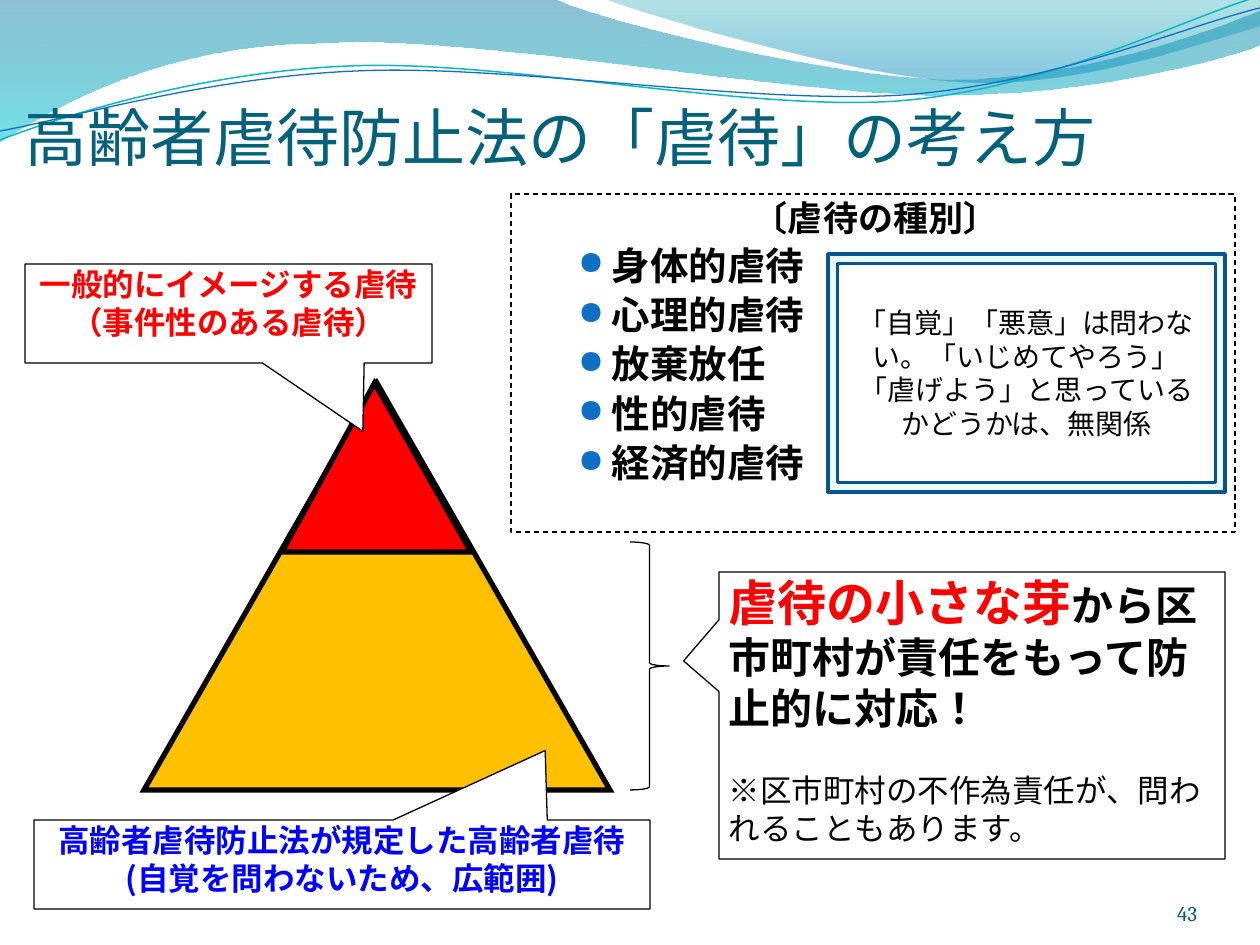
from math import cos, radians, sin

from lxml.etree import SubElement
from pptx import Presentation
from pptx.dml.color import RGBColor
from pptx.enum.dml import MSO_LINE
from pptx.enum.lang import MSO_LANGUAGE_ID
from pptx.enum.shapes import MSO_SHAPE
from pptx.enum.text import MSO_ANCHOR, PP_ALIGN
from pptx.oxml.ns import qn
from pptx.util import Pt

PX = 914400 / 126
JP, LATIN = "Noto Sans CJK JP", "Cambria"
C = {
    "black": "000000", "white": "FFFFFF", "red": "FF0000", "blue": "0000FF",
    "amber": "FFC000", "title": "04617B", "number": "045D75",
    "bullet": "0F6FC6", "frame": "0B5292", "frame_fill": "C9FAFC",
    "teal_line": "0AB8BF", "blue_line": "0F6FC6",
    "deep": "0074A1", "cyan": "00C6CF", "green": "00A1A9", "sky": "008BBF",
}
KINDS = ["身体的虐待", "心理的虐待", "放棄放任", "性的虐待", "経済的虐待"]
TILT = -2.7

# Each wave: two values are a straight step, six are a cubic curve.
BAND = [(0, -1), (554, -1), (600, 21, 837, 79, 955, 79),
        (1075, 79, 1207, 33, 1260, 11), (1261, 45),
        (1239, 55, 1096, 96, 940, 95), (784, 95, 481, 35, 324, 43),
        (163, 44, 58, 105, -1, 142), (0, -1)]
CREST = [(604, -1), (641, 14, 859, 78, 969, 82),
         (1079, 87, 1211, 40, 1260, 26), (1260, 0), (604, -1)]
TEAL_WAVE = [(0, 140), (60, 117, 199, 72, 349, 66),
             (498, 59, 747, 112, 898, 101), (1050, 89, 1182, 19, 1257, -3)]
BLUE_WAVE = [(0, 131), (59, 121, 207, 77, 357, 71),
             (508, 64, 752, 105, 903, 95), (1053, 84, 1185, 26, 1260, 8)]


def px(n):
    return round(n * PX)


def rgb(name):
    return RGBColor.from_string(C[name])


def set_alpha(parent, percents):
    """Give each colour below parent its opacity, in order."""
    for clr, percent in zip(parent.iter(qn("a:srgbClr")), percents):
        SubElement(clr, qn("a:alpha")).set("val", str(percent * 1000))


def set_line(shape, color, width):
    shape.line.color.rgb = rgb(color)
    shape.line.width = Pt(width)


def add_wave(shapes, box, steps, tilt=0):
    """Draw steps, given as they look after the tilt, inside box."""
    left, top, width, height = box
    builder = shapes.build_freeform(0, 0)
    builder.add_line_segments([(px(width), px(height))], close=False)
    sp = builder.convert_to_shape()
    for name, value in zip(("left", "top", "width", "height"), box):
        setattr(sp, name, px(value))
    sp.rotation = tilt % 360
    sp.shadow.inherit = False

    outline = next(sp._element.iter(qn("a:path")))
    for child in list(outline):
        outline.remove(child)
    outline.set("w", str(px(width)))
    outline.set("h", str(px(height)))
    ca, sa = cos(radians(-tilt)), sin(radians(-tilt))
    for i, step in enumerate(steps):
        tag = "cubicBezTo" if len(step) == 6 else "lnTo" if i else "moveTo"
        part = SubElement(outline, qn(f"a:{tag}"))
        for x, y in zip(step[::2], step[1::2]):
            dx, dy = x - left - width / 2, y - top - height / 2
            pt = SubElement(part, qn("a:pt"))
            pt.set("x", str(px(dx * ca - dy * sa + width / 2)))
            pt.set("y", str(px(dx * sa + dy * ca + height / 2)))
    return sp, outline


def add_wave_area(s, box, steps, stops):
    sp, outline = add_wave(s.shapes, box, steps)
    SubElement(outline, qn("a:close"))
    sp.line.fill.background()
    sp.fill.gradient()
    sp.fill.gradient_angle = 270
    for stop, (position, color, _) in zip(sp.fill.gradient_stops, stops):
        stop.position = position
        stop.color.rgb = rgb(color)
    set_alpha(sp._element.spPr, [opacity for _, _, opacity in stops])


def add_wave_line(group, box, steps, color, width):
    sp, _ = add_wave(group.shapes, box, steps, TILT)
    sp.fill.background()
    set_line(sp, color, width)


def add_shape(s, kind, box, fill=None, line="black", width=0.75, adj=()):
    sp = s.shapes.add_shape(kind, *map(px, box))
    sp.shadow.inherit = False
    if fill:
        sp.fill.solid()
        sp.fill.fore_color.rgb = rgb(fill)
    else:
        sp.fill.background()
    set_line(sp, line, width)
    for i, value in enumerate(adj):
        sp.adjustments[i] = value
    return sp


def add_triangle(s, box, fill, peak):
    sp = add_shape(s, MSO_SHAPE.ISOSCELES_TRIANGLE, box, fill, width=3, adj=[peak])
    ln = sp._element.spPr.find(qn("a:ln"))
    SubElement(ln, qn("a:miter")).set("lim", "800000")


def setup_text(sp, insets=(13, 6, 13, 6), anchor=MSO_ANCHOR.TOP):
    tf = sp.text_frame
    left, top, right, bottom = map(px, insets)
    formats = {"word_wrap": True, "vertical_anchor": anchor,
               "margin_left": left, "margin_top": top,
               "margin_right": right, "margin_bottom": bottom}
    for name, value in formats.items():
        setattr(tf, name, value)
    return tf


def add_par(tf, runs, **formats):
    """Fill the first empty paragraph or add one; runs: (text, size, color, bold)."""
    p = tf.paragraphs[0] if not tf.paragraphs[0].runs else tf.add_paragraph()
    font = formats.pop("font", JP)
    for name, value in {"alignment": PP_ALIGN.LEFT, **formats}.items():
        setattr(p, name, value)
    for text, size, color, bold in runs:
        r = p.add_run()
        r.text = text
        for name, value in {"name": font, "size": Pt(size), "bold": bold,
                            "language_id": MSO_LANGUAGE_ID.JAPANESE}.items():
            setattr(r.font, name, value)
        SubElement(r.font._element, qn("a:ea")).set("typeface", JP)
        r.font.color.rgb = rgb(color)
    return p


def set_indent(p, left, first=0):
    pPr = p._p.get_or_add_pPr()
    pPr.set("marL", str(px(left)))
    pPr.set("indent", str(px(first)))
    return pPr


def add_bullet(p):
    pPr = set_indent(p, 88, -34)
    clr = SubElement(pPr, qn("a:buClr"))
    SubElement(clr, qn("a:srgbClr")).set("val", C["bullet"])
    SubElement(pPr, qn("a:buSzPct")).set("val", "85000")
    SubElement(pPr, qn("a:buFont")).set("typeface", "OpenSymbol")
    SubElement(pPr, qn("a:buChar")).set("char", "●")


def add_callout(s, box, adj, top=1):
    sp = add_shape(s, MSO_SHAPE.RECTANGULAR_CALLOUT, box, "white", adj=adj)
    return setup_text(sp, (10, top, 10, 1))


def add_textbox(s, box, insets, anchor):
    return setup_text(s.shapes.add_textbox(*map(px, box)), insets, anchor)


def add_kinds_box(s):
    sp = add_shape(s, MSO_SHAPE.RECTANGLE, (511, 194, 724, 338))
    sp.line.dash_style = MSO_LINE.DASH
    tf = setup_text(sp, (13, 3, 13, 6))
    spacing = {"line_spacing": Pt(23.8), "space_before": Pt(4.4)}
    set_indent(add_par(tf, [("〔虐待の種別〕", 20, "black", True)], **spacing), 229)
    for kind in KINDS:
        add_bullet(add_par(tf, [(kind, 22, "black", True)], **spacing))


def add_frame(s):
    sp = add_shape(s, MSO_SHAPE.FRAME, (828, 254, 397, 238), "frame_fill",
                   "frame", 2, [0.04])
    set_alpha(sp._element.spPr, [40])
    tf = setup_text(sp, anchor=MSO_ANCHOR.MIDDLE)
    text = "「自覚」「悪意」は問わない。「いじめてやろう」「虐げよう」と思っているかどうかは、無関係"
    add_par(tf, [(text, 16, "black", False)], font=LATIN,
            alignment=PP_ALIGN.CENTER, line_spacing=Pt(19.1))


def main():
    prs = Presentation()
    prs.slide_width, prs.slide_height = px(1260), px(945)
    s = prs.slides.add_slide(prs.slide_layouts[6])

    add_wave_area(s, (-1, -1, 1262, 143), BAND, [(0, "deep", 45), (1, "cyan", 55)])
    add_wave_area(s, (604, -1, 656, 88), CREST, [(0, "green", 30), (0.8, "sky", 45)])
    group = s.shapes.add_group_shape()
    add_wave_line(group, (-2, 28, 1262, 89), TEAL_WAVE, "teal_line", 0.85)
    add_wave_line(group, (-2, 38, 1264, 73), BLUE_WAVE, "blue_line", 0.75)

    add_triangle(s, (144, 383, 466, 407), "amber", 0.5)
    tf = add_textbox(s, (25, 86, 1211, 97), (0, 3, 0, 0), MSO_ANCHOR.MIDDLE)
    add_par(tf, [("高齢者虐待防止法の「虐待」の考え方", 36, "title", False)])
    add_kinds_box(s)
    add_triangle(s, (282, 383, 189, 169), "red", 0.49)

    line = {"line_spacing": Pt(21.7)}
    centred = {"alignment": PP_ALIGN.CENTER, **line}
    tf = add_callout(s, (25, 264, 407, 99), (0.33, 1.19))
    for text in ("一般的にイメージする虐待", "（事件性のある虐待）"):
        add_par(tf, [(text, 18, "red", True)], **centred)
    tf = add_callout(s, (34, 820, 616, 89), (0.33, -1.28))
    add_par(tf, [("高齢者虐待防止法が規定した高齢者虐待(自覚を問わないため、広範囲)",
                  18, "blue", True)], **centred)

    add_shape(s, MSO_SHAPE.RIGHT_BRACE, (630, 542, 39, 248))
    tf = add_callout(s, (719, 572, 506, 287), (-0.57, -0.19), top=9)
    add_par(tf, [("虐待の小さな芽", 28, "red", True),
                 ("から区市町村が責任をもって防止的に対応！", 24, "black", True)],
            line_spacing=Pt(28.9))
    add_par(tf, [("※区市町村の不作為責任が、問われることもあります。", 18, "black", False)],
            space_before=Pt(21.7), **line)

    add_frame(s)
    tf = add_textbox(s, (1092, 876, 105, 50), (0, 0, 0, 0), MSO_ANCHOR.BOTTOM)
    add_par(tf, [("43", 12, "number", False)], font=LATIN, alignment=PP_ALIGN.RIGHT)
    prs.save("out.pptx")


if __name__ == "__main__":
    main()
